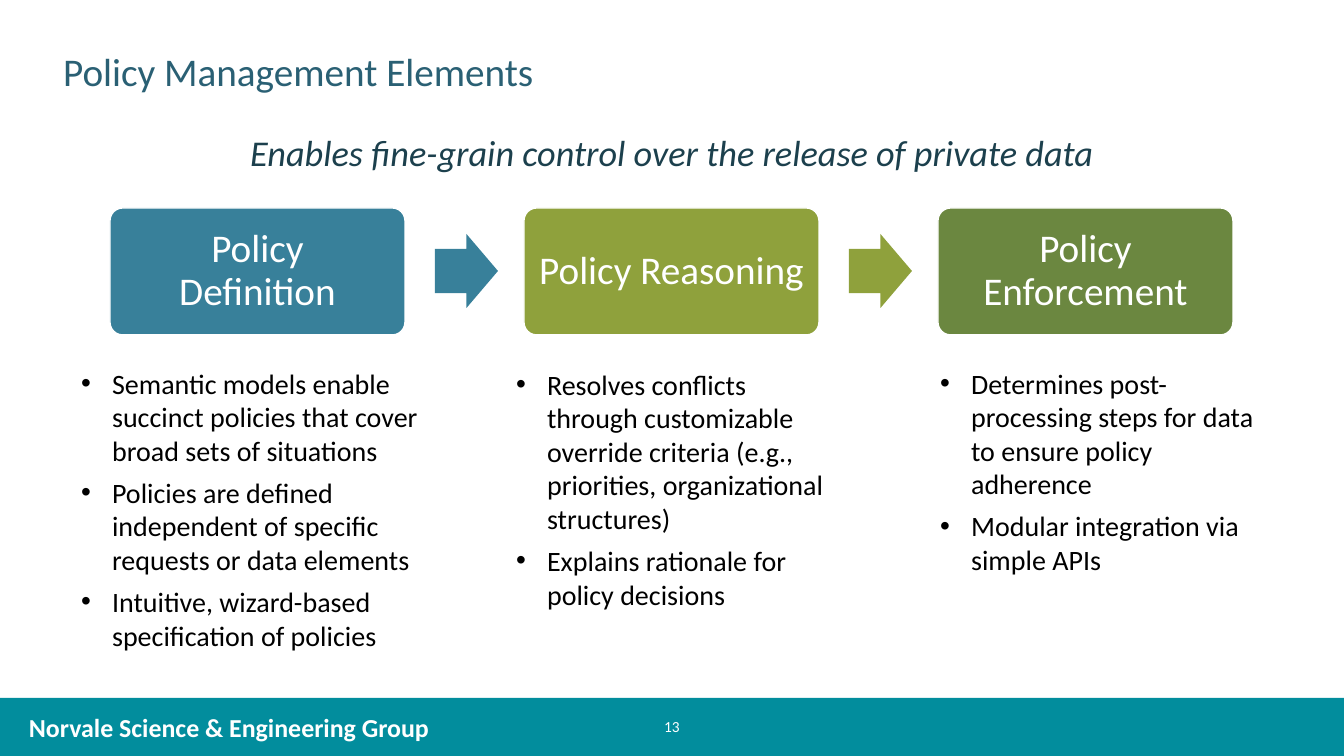
from pptx import Presentation
from pptx import util as u
from pptx.dml.color import RGBColor
from pptx.enum import shapes, text
from lxml import etree

SCALE = 914400 / 100.8  # EMU in one px
A = "{http://schemas.openxmlformats.org/drawingml/2006/main}"
FONT = "Calibri"
COLORS = {
    "white": "FFFFFF", "black": "000000", "band": "028D9D",
    "title": "2A6074", "tag": "1C404D",
    "blue": "38809A", "lime": "8FA13C", "green": "6B8740",
}
LEFT, CENTER = text.PP_ALIGN.LEFT, text.PP_ALIGN.CENTER
TOP, MIDDLE = text.MSO_ANCHOR.TOP, text.MSO_ANCHOR.MIDDLE
PITCH = 414  # from one step to the next

# heading, colour, list left, list top, list width, list height, points
STEPS = [
    ("Policy\vDefinition", "blue", 71, 361, 361, 298, [
        "Semantic models enable succinct policies that cover broad sets of situations",
        "Policies are defined independent of specific requests or data elements",
        "Intuitive, wizard-based specification of policies"]),
    ("Policy Reasoning", "lime", 506, 362, 343, 256, [
        "Resolves conflicts through customizable override criteria "
        "(e.g., priorities, organizational structures)",
        "Explains rationale for policy decisions"]),
    ("Policy Enforcement", "green", 930, 361, 343, 265, [
        "Determines post-processing steps for data to ensure policy adherence",
        "Modular integration via simple APIs"]),
]


def px(n):
    return u.Emu(round(n * SCALE))


def rgb(name):
    return RGBColor.from_string(COLORS[name])


def place(shape, x, y, w, h):
    shape.left, shape.top, shape.width, shape.height = map(px, (x, y, w, h))
    return shape


def bullet(para):
    props = para._p.get_or_add_pPr()
    props.set("marL", str(px(31)))
    props.set("indent", str(-px(31)))
    etree.SubElement(props, A + "buFont", typeface="Arial")
    etree.SubElement(props, A + "buChar", char="•")


def write(shape, *lines, size, color="black", bold=False, italic=False,
          align=LEFT, anchor=TOP, leading=None, after=0, dots=False):
    frame = shape.text_frame
    frame.word_wrap = True
    frame.auto_size = text.MSO_AUTO_SIZE.NONE
    frame.vertical_anchor = anchor
    for i, line in enumerate(lines):
        para = frame.add_paragraph() if i else frame.paragraphs[0]
        para.text = line
        if dots:
            bullet(para)
        para.alignment = align
        para.line_spacing = leading
        para.space_before, para.space_after = u.Pt(0), u.Pt(after)
        font = para.font
        font.name, font.size = FONT, u.Pt(size)
        font.bold, font.italic = bold, italic
        font.color.rgb = rgb(color)


def block(slide, kind, x, y, w, h, fill, *adjust):
    shape = slide.shapes.add_shape(kind, *map(px, (x, y, w, h)))
    shape.shadow.inherit = False
    shape.fill.solid()
    shape.fill.fore_color.rgb = rgb(fill)
    shape.line.fill.background()
    for i, value in enumerate(adjust):
        shape.adjustments[i] = value
    return shape


def label(slide, x, y, w, h, words, **style):
    box = slide.shapes.add_textbox(*map(px, (x, y, w, h)))
    write(box, words, **style)


def step(slide, x, words, fill):
    box = block(slide, shapes.MSO_SHAPE.ROUNDED_RECTANGLE,
                x, 208, 295, 127, fill, 0.1)
    box.line.color.rgb = rgb("white")
    box.line.width = u.Pt(1)
    box.text_frame.margin_left = box.text_frame.margin_right = px(8)
    write(box, words, size=28, color="white", align=CENTER,
          anchor=MIDDLE, leading=0.9)


def main():
    deck = Presentation()
    deck.slide_width, deck.slide_height = px(1344), px(756)
    slide = deck.slides.add_slide(deck.slide_layouts[4])
    title, tag, *lists = slide.placeholders

    # Footer band
    block(slide, shapes.MSO_SHAPE.RECTANGLE, 0, 698, 1344, 58, "band")
    label(slide, 19, 707, 500, 40, "Norvale Science & Engineering Group",
          size=18.5, color="white", bold=True)
    label(slide, 637, 710, 70, 33, "13", size=11, color="white",
          align=CENTER, anchor=MIDDLE)

    # Title and tagline
    write(place(title, 53, 40, 1199, 67), "Policy Management Elements",
          size=28, color="title", anchor=MIDDLE, leading=0.9)
    write(place(tag, 205, 125, 934, 49),
          "Enables fine-grain control over the release of private data",
          size=25.9, color="tag", italic=True, align=CENTER)

    # Steps, the arrows between them and their lists
    for i, (words, fill, x, y, w, h, points) in enumerate(STEPS):
        step(slide, 110 + i * PITCH, words, fill)
        if i < len(STEPS) - 1:
            block(slide, shapes.MSO_SHAPE.RIGHT_ARROW,
                  435 + i * PITCH, 234, 63, 74, fill, 0.6, 0.5)
        write(place(lists[i], x, y, w, h), *points,
              size=20, after=6, dots=True)

    deck.save("out.pptx")


if __name__ == "__main__":
    main()
